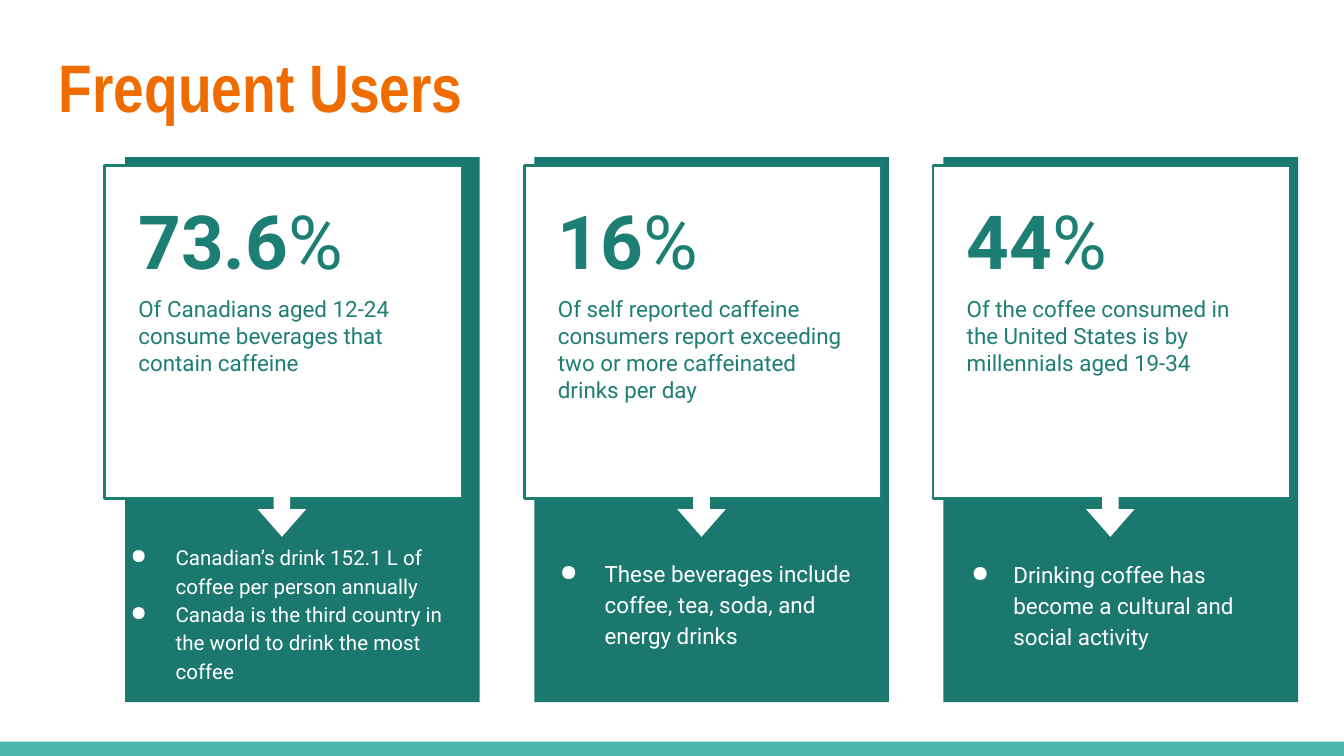
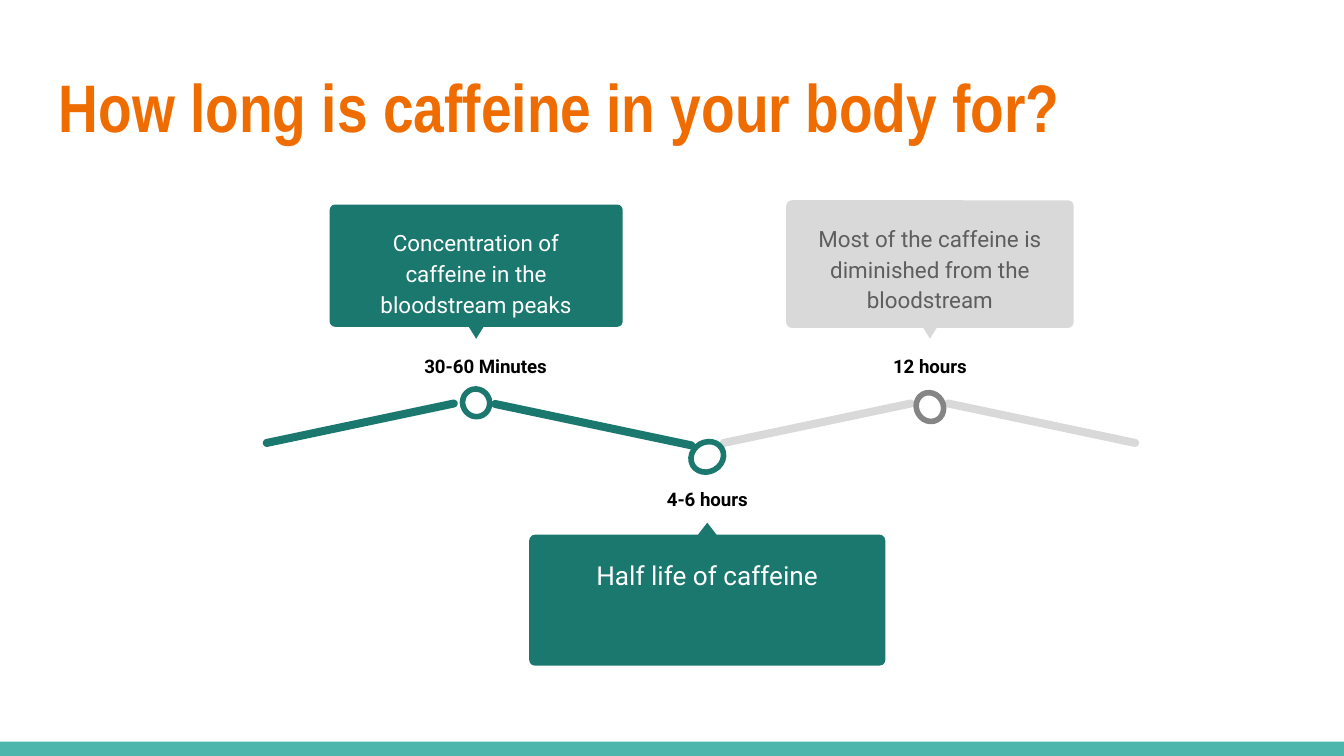
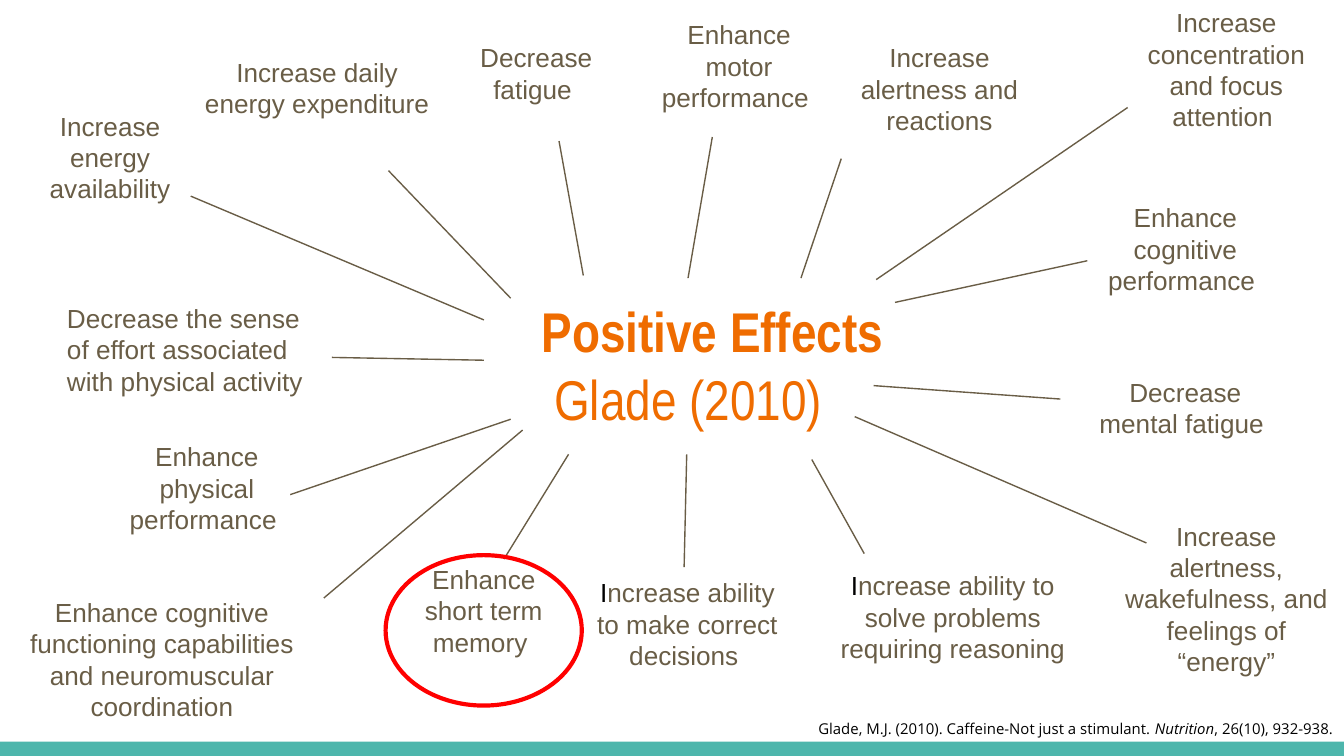
from dataclasses import dataclass, field
from typing import Any, NamedTuple, Optional

from lxml import etree
from pptx import Presentation
from pptx.dml.color import RGBColor
from pptx.enum.shapes import MSO_CONNECTOR, MSO_SHAPE
from pptx.enum.text import MSO_ANCHOR, PP_ALIGN
from pptx.oxml.ns import qn
from pptx.util import Pt

RECT, ROUND_RECT = MSO_SHAPE.RECTANGLE, MSO_SHAPE.ROUNDED_RECTANGLE
OVAL, TRIANGLE, ARROW = MSO_SHAPE.OVAL, MSO_SHAPE.ISOSCELES_TRIANGLE, MSO_SHAPE.RIGHT_ARROW
STRAIGHT = MSO_CONNECTOR.STRAIGHT
LEFT, CENTER = PP_ALIGN.LEFT, PP_ALIGN.CENTER
TOP = MSO_ANCHOR.TOP

WHITE = RGBColor(0xFF, 0xFF, 0xFF)
BLACK = RGBColor(0x00, 0x00, 0x00)
ORANGE = RGBColor(0xEF, 0x6C, 0x00)
AQUA = RGBColor(0x4D, 0xB6, 0xAC)
TEAL = RGBColor(0x1B, 0x78, 0x6E)
TEAL_TEXT = RGBColor(0x1D, 0x7E, 0x74)
LIGHT_GRAY = RGBColor(0xD9, 0xD9, 0xD9)
MID_GRAY = RGBColor(0x85, 0x85, 0x85)
DARK_GRAY = RGBColor(0x5E, 0x5E, 0x5E)
BROWN = RGBColor(0x69, 0x5D, 0x46)
RED = RGBColor(0xFF, 0x00, 0x00)

SLIDE_W, SLIDE_H = 720, 405
INSET = 7.2


class Box(NamedTuple):
    x: float
    y: float
    w: float
    h: float

    def points(self) -> list[Pt]:
        return [Pt(v) for v in self]


class Run(NamedTuple):
    text: str
    fmt: dict[str, Any] = {}


@dataclass(frozen=True)
class Stat:
    number: str
    claim: str
    bullets: list[str]
    card_x: float
    notes: Box
    size: float = 12
    hang: float = 24


@dataclass(frozen=True)
class Milestone:
    label: str
    text: str
    card: Box
    text_h: float
    pointer: tuple[float, float, float]  # top, width, rotation
    ring: tuple[float, float, float]  # top, width, height
    label_at: tuple[float, float, float]  # top, width, shift from the axis
    color: RGBColor = TEAL
    ring_color: RGBColor = TEAL
    text_color: RGBColor = WHITE
    size: float = 12


@dataclass(frozen=True)
class Effect:
    text: str
    box: Box
    start: tuple[float, float]
    end: tuple[float, float]
    align: Any = CENTER
    initial: dict[str, Any] = field(default_factory=dict)


# Shared drawing functions

def font(size: float, name: str, color: RGBColor, **more: Any) -> dict[str, Any]:
    return {"size": Pt(size), "name": name, "color": color, **more}


def set_attrs(target: Any, values: dict[str, Any]) -> None:
    for key, value in values.items():
        if key == "color":
            target.color.rgb = value
        else:
            setattr(target, key, value)


def centered(cx: float, y: float, w: float, h: float) -> Box:
    return Box(cx - w / 2, y, w, h)


def add_shape(shapes: Any, kind: Any, box: Box, fill: Optional[RGBColor] = None,
              line: Optional[tuple[RGBColor, float]] = None,
              rot: float = 0, adj: tuple[float, ...] = ()) -> None:
    sp = shapes.add_shape(kind, *box.points())
    sp.shadow.inherit = False
    sp.rotation = rot
    for i, value in enumerate(adj):
        sp.adjustments[i] = value
    if fill is None:
        sp.fill.background()
    else:
        sp.fill.solid()
        sp.fill.fore_color.rgb = fill
    if line is None:
        sp.line.fill.background()
    else:
        sp.line.color.rgb = line[0]
        sp.line.width = Pt(line[1])


def add_bullet(p: Any, hang: float, color: RGBColor) -> None:
    pPr = p._p.get_or_add_pPr()
    pPr.set("marL", str(Pt(36)))
    pPr.set("indent", str(-Pt(hang)))
    clr = etree.SubElement(pPr, qn("a:buClr"))
    etree.SubElement(clr, qn("a:srgbClr"), val=str(color))
    etree.SubElement(pPr, qn("a:buChar"), char="●")


def add_text(shapes: Any, box: Box, paras: list[list[Run]], base: dict[str, Any],
             hang: float = 0, **para: Any) -> None:
    tf = shapes.add_textbox(*box.points()).text_frame
    margins = {f"margin_{side}": Pt(INSET) for side in ("left", "top", "right", "bottom")}
    set_attrs(tf, {"word_wrap": True, "vertical_anchor": TOP, **margins})
    for i, runs in enumerate(paras):
        p = tf.paragraphs[0] if i == 0 else tf.add_paragraph()
        set_attrs(p, para)
        if hang:
            add_bullet(p, hang, base["color"])
        for run in runs:
            r = p.add_run()
            r.text = run.text
            set_attrs(r.font, {**base, **run.fmt})


def add_line(shapes: Any, start: tuple[float, float], end: tuple[float, float],
             color: RGBColor, width: float) -> None:
    cn = shapes.add_connector(STRAIGHT, *(Pt(v) for v in start + end))
    cn.line.color.rgb = color
    cn.line.width = Pt(width)
    etree.SubElement(cn._element.spPr, qn("a:effectLst"))


def add_slide(prs: Any, title: list[list[Run]], box: Box, size: float = 36) -> Any:
    s = prs.slides.add_slide(prs.slide_layouts[6])
    add_shape(s.shapes, RECT, Box(0, 397.4, SLIDE_W, 7.6), AQUA)
    add_text(s.shapes, box, title, font(size, "Arial Narrow", ORANGE, bold=True))
    return s


# Slide 1: statistics

STAT_PITCH, PANEL_X = 219.2, 67
STATS = [
    Stat("73.6", "Of Canadians aged 12-24 consume beverages that contain caffeine",
         ["Canadian’s drink 152.1 L of coffee per person annually",
          "Canada is the third country in the world to drink the most coffee"],
         56, Box(51, 283, 202.5, 78), size=11),
    Stat("16", "Of self reported caffeine consumers report exceeding two or more "
         "caffeinated drinks per day",
         ["These beverages include coffee, tea, soda, and energy drinks"],
         280.8, Box(280.8, 291, 190, 78)),
    Stat("44", "Of the coffee consumed in the United States is by millennials aged 19-34",
         ["Drinking coffee has become a cultural and social activity"],
         499.8, Box(499.8, 291.5, 190, 78), hang=22.5),
]


def draw_stat(shapes: Any, stat: Stat, panel_x: float) -> None:
    text_x = stat.card_x + 11
    add_shape(shapes, RECT, Box(panel_x, 84.2, 190, 292), TEAL)
    add_shape(shapes, RECT, Box(stat.card_x, 88.5, 191.5, 178.5), WHITE, (TEAL_TEXT, 1.5))
    add_text(shapes, Box(text_x, 151.2, 170, 44), [[Run(stat.claim)]],
             font(12, "Roboto", TEAL_TEXT))
    add_text(shapes, Box(text_x, 97.2, 170, 48),
             [[Run(stat.number, {"bold": True}), Run("%")]], font(40, "Roboto", TEAL_TEXT))
    add_shape(shapes, ARROW, Box(stat.card_x + 81, 260.6, 28, 26), WHITE,
              rot=90, adj=(0.342, 0.57))
    add_text(shapes, stat.notes, [[Run(b)] for b in stat.bullets],
             font(stat.size, "Roboto", WHITE), hang=stat.hang, line_spacing=1.15)


def build_users(prs: Any) -> None:
    s = add_slide(prs, [[Run("Frequent Users")]], Box(24.5, 17.3, 671, 55.4))
    for i, stat in enumerate(STATS):
        draw_stat(s.shapes.add_group_shape().shapes, stat, PANEL_X + i * STAT_PITCH)


# Slide 2: timeline

TILT = 11.9
BARS = [
    (Box(504.7, 224.6, 106.6, 4.3), TILT, LIGHT_GRAY),
    (Box(384.5, 224.6, 106.6, 4.3), -TILT, LIGHT_GRAY),
    (Box(262, 225.4, 111.6, 4.3), TILT, TEAL),
    (Box(139.7, 224.6, 106.6, 4.3), -TILT, TEAL),
]
MILESTONES = [
    Milestone("12 hours", "Most of the caffeine is diminished from the bloodstream",
              Box(421.2, 107.3, 154, 68.4), 39, (175, 8, 180), (210.2, 14.4, 15.8),
              (181.5, 62.6, 0), LIGHT_GRAY, MID_GRAY, DARK_GRAY),
    Milestone("4-6 hours", "Half life of caffeine",
              Box(283.5, 286.4, 190.8, 70.2), 34.6, (280, 10, 0), (236.9, 18, 15.8),
              (252.7, 77.8, 0), size=14),
    Milestone("30-60 Minutes", "Concentration of caffeine in the bloodstream peaks",
              Box(176.6, 109.6, 157, 65.5), 58.3, (175, 8, 180), (208.3, 14.4, 15),
              (181.5, 86.4, 5)),
]


def draw_milestone(shapes: Any, m: Milestone) -> None:
    cx = m.card.x + m.card.w / 2
    para = {"alignment": CENTER, "line_spacing": 1.15, "space_after": Pt(16)}
    pointer_y, pointer_w, rot = m.pointer
    label_y, label_w, shift = m.label_at
    add_shape(shapes, ROUND_RECT, m.card, m.color, adj=(0.045,))
    add_shape(shapes, TRIANGLE, centered(cx, pointer_y, pointer_w, 6.5), m.color, rot=rot)
    add_shape(shapes, OVAL, centered(cx, *m.ring), WHITE, (m.ring_color, 3), rot=330.2)
    add_text(shapes, centered(cx + shift, label_y, label_w, 26.6), [[Run(m.label)]],
             font(10, "Roboto", BLACK, bold=True), **para)
    add_text(shapes, centered(cx, m.card.y + 3.8, m.card.w - 8, m.text_h), [[Run(m.text)]],
             font(m.size, "Roboto", m.text_color), **para)


def build_timeline(prs: Any) -> None:
    s = add_slide(prs, [[Run("How long is caffeine in your body for?")]],
                  Box(24.5, 27.6, 671, 55.4))
    for box, rot, color in BARS:
        add_shape(s.shapes, ROUND_RECT, box, color, rot=rot, adj=(0.5,))
    for milestone in MILESTONES:
        draw_milestone(s.shapes.add_group_shape().shapes, milestone)


# Slide 3: effects around a hub

BLACK_INITIAL = {"color": BLACK}
EFFECTS = [
    Effect("Increase energy availability", Box(15.8, 51.8, 86.4, 16.6),
           (259.2, 171.4), (102.2, 105.1)),
    Effect("Increase daily energy expenditure ", Box(102.2, 23, 135.4, 16.6),
           (273.6, 159.8), (208.1, 91.4)),
    Effect("Decrease fatigue ", Box(240.5, 22.3, 93.6, 7.2), (312.5, 147.6), (299.5, 75.6)),
    Effect("Decrease the sense of effort associated with physical activity",
           Box(28.8, 162, 145.4, 7.2), (259.2, 193), (177.8, 191.5), LEFT),
    Effect("Enhance physical performance ", Box(58.3, 242.6, 105.1, 0.7),
           (273.6, 224.6), (155.5, 265)),
    Effect("Enhance motor performance ", Box(347, 10.1, 97.9, 7.2), (368.6, 149), (381.6, 73.4)),
    Effect("Increase alertness, wakefulness, and feelings of “energy”",
           Box(594, 278.6, 126, 7.2), (457.9, 223.2), (614.2, 290.9)),
    Effect("Increase alertness and reactions", Box(445, 22.3, 116.6, 7.2),
           (429.1, 149), (450.7, 85)),
    Effect("Increase concentration and focus attention ", Box(605.5, 10.1, 103, 0.7),
           (469.4, 149.8), (604.1, 57.6)),
    Effect("Enhance cognitive performance ", Box(582.5, 108, 105.1, 7.2),
           (479.5, 162), (582.5, 139.7)),
    Effect("Decrease mental fatigue ", Box(576.7, 194.4, 116.6, 16.6),
           (468, 206.6), (568.1, 213.8)),
    Effect("Enhance cognitive functioning capabilities and neuromuscular coordination",
           Box(0, 314.6, 173.5, 12.2), (280, 230.4), (173.5, 320.4)),
    Effect("Enhance short term memory ", Box(216, 308.2, 86.4, 0.7),
           (304.6, 243.4), (270, 299.5)),
    Effect("Increase ability to solve problems requiring reasoning",
           Box(434.9, 300.2, 151.2, 12.2), (434.9, 246.2), (463, 296.6),
           initial=BLACK_INITIAL),
    Effect("Increase ability to make correct decisions ", Box(312.5, 308.9, 111.6, 7.2),
           (367.9, 243.4), (366.5, 303.8), initial=BLACK_INITIAL),
]


def build_effects(prs: Any) -> None:
    hub = [[Run("Positive Effects")], [Run(" "), Run("Glade (2010)", {"bold": False})]]
    s = add_slide(prs, hub, Box(283, 151.9, 270, 49.7), 30)
    for e in EFFECTS:
        add_line(s.shapes, e.start, e.end, BROWN, 0.75)
    for e in EFFECTS:
        runs = [Run(e.text[0], e.initial), Run(e.text[1:])] if e.initial else [Run(e.text)]
        add_text(s.shapes, e.box, [runs], font(14, "Arial", BROWN), alignment=e.align)
    # Reference and highlight
    add_text(s.shapes, Box(431.3, 378.7, 319, 21.6),
             [[Run("Glade, M.J. (2010). Caffeine-Not just a stimulant. "),
               Run("Nutrition", {"italic": True}), Run(", 26(10), 932-938.")]],
             font(8, "Open Sans", BLACK), line_spacing=1.15)
    add_shape(s.shapes, OVAL, Box(206.6, 297.4, 105.1, 80.6), line=(RED, 2.25))


def main() -> None:
    prs = Presentation()
    prs.slide_width, prs.slide_height = Pt(SLIDE_W), Pt(SLIDE_H)
    build_users(prs)
    build_timeline(prs)
    build_effects(prs)
    prs.save("out.pptx")


if __name__ == "__main__":
    main()
